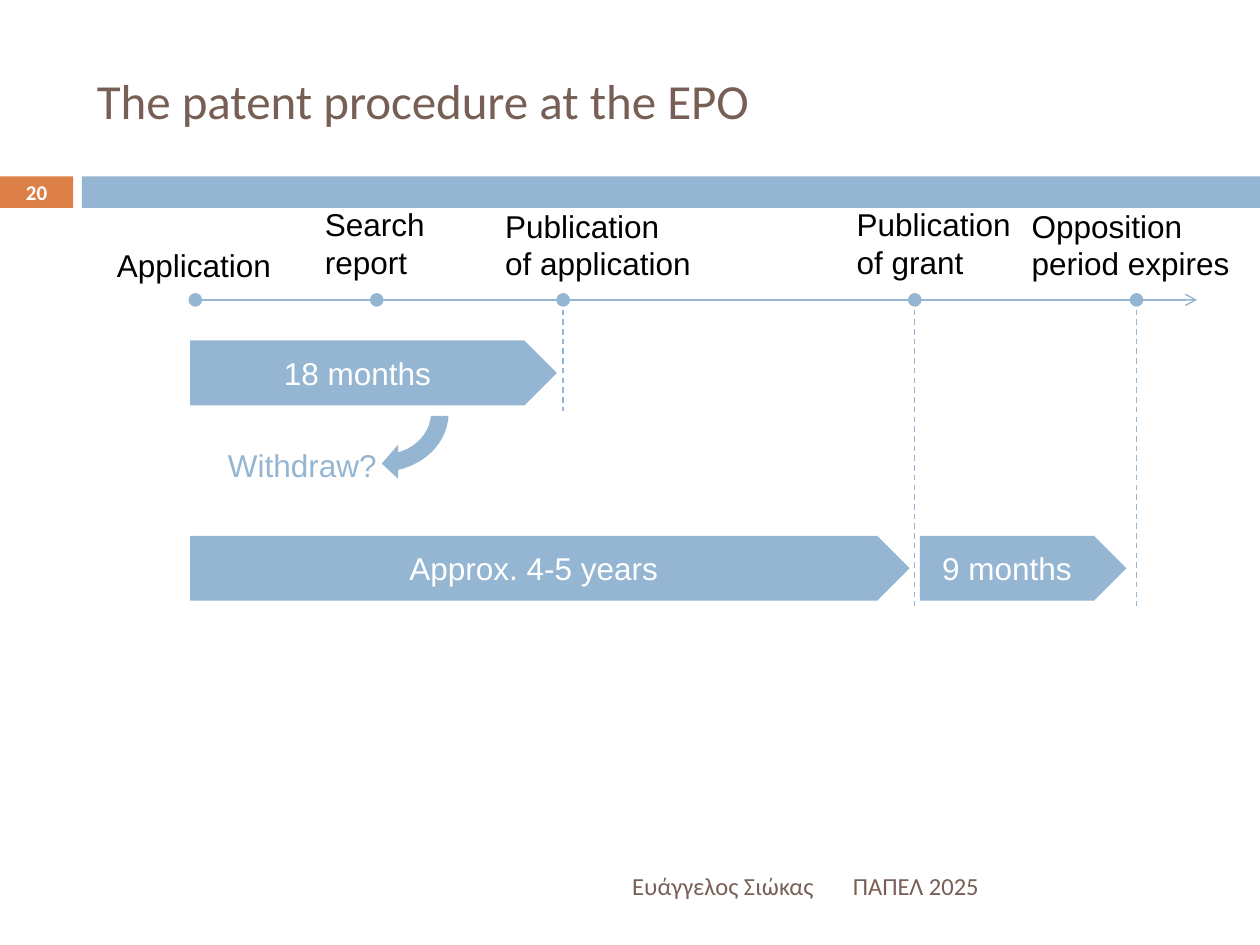
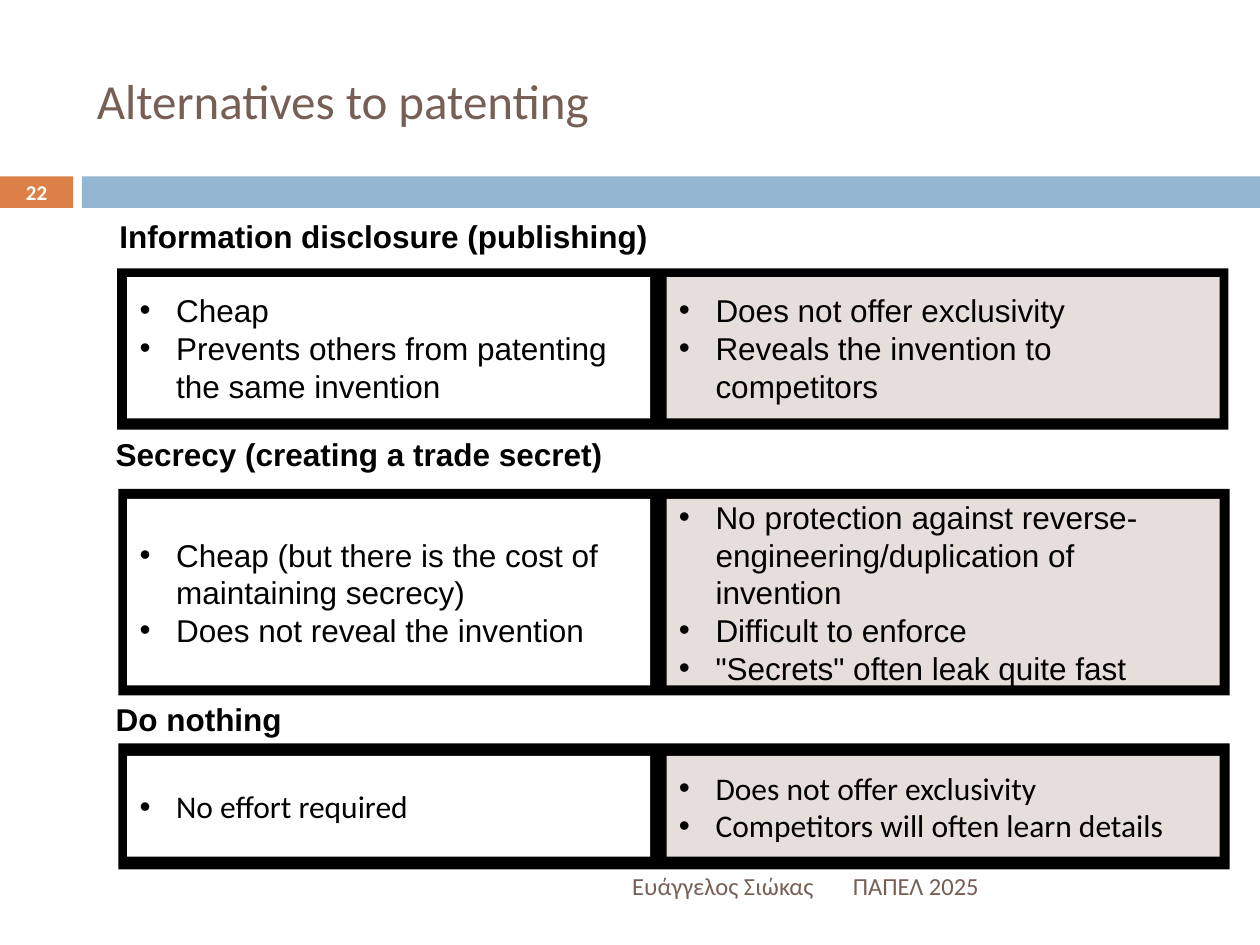
"""Build two slides on the patent procedure and the alternatives to patenting."""
import lxml.etree
import pptx
import pptx.dml.color
import pptx.enum.dml
import pptx.enum.shapes
import pptx.enum.text
import pptx.oxml.ns
import pptx.util

Inches = pptx.util.Inches
RGBColor = pptx.dml.color.RGBColor
SHAPE = pptx.enum.shapes.MSO_SHAPE
ALIGN = pptx.enum.text.PP_ALIGN
ANCHOR = pptx.enum.text.MSO_ANCHOR
qn = pptx.oxml.ns.qn

BLUE = RGBColor(0x94, 0xB6, 0xD2)
ORANGE = RGBColor(0xDD, 0x80, 0x47)
BROWN = RGBColor(0x77, 0x5F, 0x55)
BEIGE = RGBColor(0xE6, 0xDE, 0xDB)
BLACK = RGBColor(0x00, 0x00, 0x00)
WHITE = RGBColor(0xFF, 0xFF, 0xFF)


def paint(shape, color):
    """Give a shape a plain fill without outline or shadow."""
    shape.shadow.inherit = False
    shape.fill.solid()
    shape.fill.fore_color.rgb = color
    shape.line.fill.background()
    return shape


def write(box, lines, color=BLACK, size=18, font="Arial", bold=False,
          align=ALIGN.LEFT, anchor=ANCHOR.MIDDLE, wrap=True, bullets=False):
    """Fill a box with one paragraph per line."""
    frame = box.text_frame
    frame.word_wrap = wrap
    frame.vertical_anchor = anchor
    frame.text = "\n".join(lines)
    for para in frame.paragraphs:
        para.alignment = align
        if bullets:
            properties = para._p.get_or_add_pPr()
            properties.set("marL", str(Inches(0.29)))
            properties.set("indent", str(-Inches(0.29)))
            lxml.etree.SubElement(properties, qn("a:buFont"), typeface="Arial")
            lxml.etree.SubElement(properties, qn("a:buChar"), char="•")
        para.font.name = font
        para.font.size = pptx.util.Pt(size)
        para.font.bold = bold
        para.font.color.rgb = color


deck = pptx.Presentation()
deck.slide_width = Inches(10)
deck.slide_height = Inches(7.5)

pages = []
for title, number in [("The patent procedure at the EPO", "20"),
                      ("Alternatives to patenting", "22")]:
    page = deck.slides.add_slide(deck.slide_layouts[6])
    pages.append(page)
    for left, width, color in [(0, 0.58, ORANGE), (0.65, 9.35, BLUE)]:
        bounds = map(Inches, (left, 1.4, width, 0.25))
        paint(page.shapes.add_shape(SHAPE.RECTANGLE, *bounds), color)
    for bounds, text, color, size, bold, align in [
        ((0.67, 0.25, 8.92, 1.08), title, BROWN, 28, False, ALIGN.LEFT),
        ((0, 1.39, 0.58, 0.27), number, WHITE, 12, True, ALIGN.CENTER),
        ((6.67, 6.83, 2.92, 0.4), "ΠΑΠΕΛ 2025", BROWN, 14, False, ALIGN.LEFT),
        ((0.67, 6.83, 5.93, 0.4), "Ευάγγελος Σιώκας ", BROWN, 14, False, ALIGN.RIGHT),
    ]:
        box = page.shapes.add_textbox(*map(Inches, bounds))
        write(box, [text], color, size, "Calibri", bold, align)
procedure, alternatives = pages

AXIS_Y = 2.38
for start_x, start_y, end_x, end_y in [
    (1.51, AXIS_Y, 9.5, AXIS_Y),
    (4.47, AXIS_Y, 4.47, 3.26),
    (7.26, AXIS_Y, 7.26, 4.81),
    (9.02, AXIS_Y, 9.02, 4.81),
]:
    line = procedure.shapes.add_connector(
        pptx.enum.shapes.MSO_CONNECTOR.STRAIGHT,
        *map(Inches, (start_x, start_y, end_x, end_y)))
    line.line.color.rgb = BLUE
    line.line.width = pptx.util.Pt(0.79)
    if start_x == end_x:
        line.line.dash_style = pptx.enum.dml.MSO_LINE.DASH
    else:
        lxml.etree.SubElement(line.line._get_or_add_ln(), qn("a:tailEnd"), type="arrow")
    lxml.etree.SubElement(line._element.spPr, qn("a:effectLst"))

for center, left, top, width, lines in [
    (1.55, 0.83, 1.9, 1.42, ["Application"]),
    (2.99, 2.48, 1.58, 1.06, ["Search", "report"]),
    (4.47, 3.91, 1.59, 1.68, ["Publication", "of application"]),
    (7.26, 6.7, 1.58, 1.42, ["Publication", "of grant"]),
    (9.02, 8.09, 1.59, 1.87, ["Opposition", "period expires"]),
]:
    bounds = map(Inches, (center - 0.04, AXIS_Y - 0.04, 0.08, 0.08))
    dot = paint(procedure.shapes.add_shape(SHAPE.OVAL, *bounds), BLUE)
    dot.line.color.rgb = BLUE
    dot.line.width = pptx.util.Pt(2)
    height = 0.1 + 0.3 * len(lines)
    label = procedure.shapes.add_textbox(*map(Inches, (left, top, width, height)))
    write(label, lines, anchor=ANCHOR.TOP, wrap=False)

outer_curve = [(3.56, 3.3), (3.55, 3.51), (3.38, 3.68), (3.16, 3.73)]
inner_curve = [(3.16, 3.59), (3.31, 3.55), (3.41, 3.43), (3.42, 3.3)]
arrow_head = [(3.16, 3.8), (3.03, 3.68), (3.16, 3.53)]
edges = []
for curve in (outer_curve, inner_curve):
    edge = []
    for step in range(17):
        t = step / 16
        weights = ((1 - t) ** 3, 3 * t * (1 - t) ** 2, 3 * t * t * (1 - t), t ** 3)
        edge.append([sum(weight * point[axis] for weight, point in zip(weights, curve))
                     for axis in (0, 1)])
    edges.append(edge)
outline = [(Inches(x), Inches(y)) for x, y in edges[0] + arrow_head + edges[1]]
builder = procedure.shapes.build_freeform(*outline[0])
builder.add_line_segments(outline[1:], close=True)
paint(builder.convert_to_shape(), BLUE)
withdraw = procedure.shapes.add_textbox(*map(Inches, (1.71, 3.49, 1.38, 0.4)))
write(withdraw, ["Withdraw?"], BLUE, anchor=ANCHOR.TOP, wrap=False)

for left, top, width, text in [
    (1.51, 2.7, 2.91, "18 months"),
    (1.51, 4.25, 5.71, "Approx. 4-5 years"),
    (7.3, 4.25, 1.64, "9 months"),
]:
    bounds = map(Inches, (left, top, width, 0.52))
    period = paint(procedure.shapes.add_shape(SHAPE.RIGHT_ARROW, *bounds), BLUE)
    period.adjustments[0] = 0.99
    period.adjustments[1] = 0.5
    write(period, [text], WHITE, align=ALIGN.CENTER)

for heading, heading_bounds, frame_bounds, cell_top, cell_height, font, pros, cons in [
    ("Information disclosure (publishing)", (0.85, 1.67, 4.4, 0.4),
     (0.93, 2.13, 8.82, 1.28), 2.2, 1.12, "Arial",
     ["Cheap", "Prevents others from patenting the same invention"],
     ["Does not offer exclusivity", "Reveals the invention to competitors"]),
    ("Secrecy (creating a trade secret)", (0.82, 3.4, 4.06, 0.4),
     (0.94, 3.88, 8.82, 1.64), 3.96, 1.48, "Arial",
     ["Cheap (but there is the cost of maintaining secrecy)",
      "Does not reveal the invention"],
     ["No protection against reverse-engineering/duplication of invention",
      "Difficult to enforce", "\"Secrets\" often leak quite fast"]),
    ("Do nothing", (0.82, 5.51, 1.52, 0.4),
     (0.94, 5.9, 8.82, 1), 6, 0.8, "Calibri",
     ["No effort required"],
     ["Does not offer exclusivity", "Competitors will often learn details"]),
]:
    frame_shape = alternatives.shapes.add_shape(SHAPE.RECTANGLE, *map(Inches, frame_bounds))
    paint(frame_shape, BLACK)
    for left, width, color, lines in [(1.01, 4.15, WHITE, pros), (5.29, 4.39, BEIGE, cons)]:
        bounds = map(Inches, (left, cell_top, width, cell_height))
        cell = paint(alternatives.shapes.add_shape(SHAPE.RECTANGLE, *bounds), color)
        write(cell, lines, font=font, bullets=True)
    box = alternatives.shapes.add_textbox(*map(Inches, heading_bounds))
    write(box, [heading], bold=True, anchor=ANCHOR.TOP, wrap=False)

deck.save("out.pptx")
